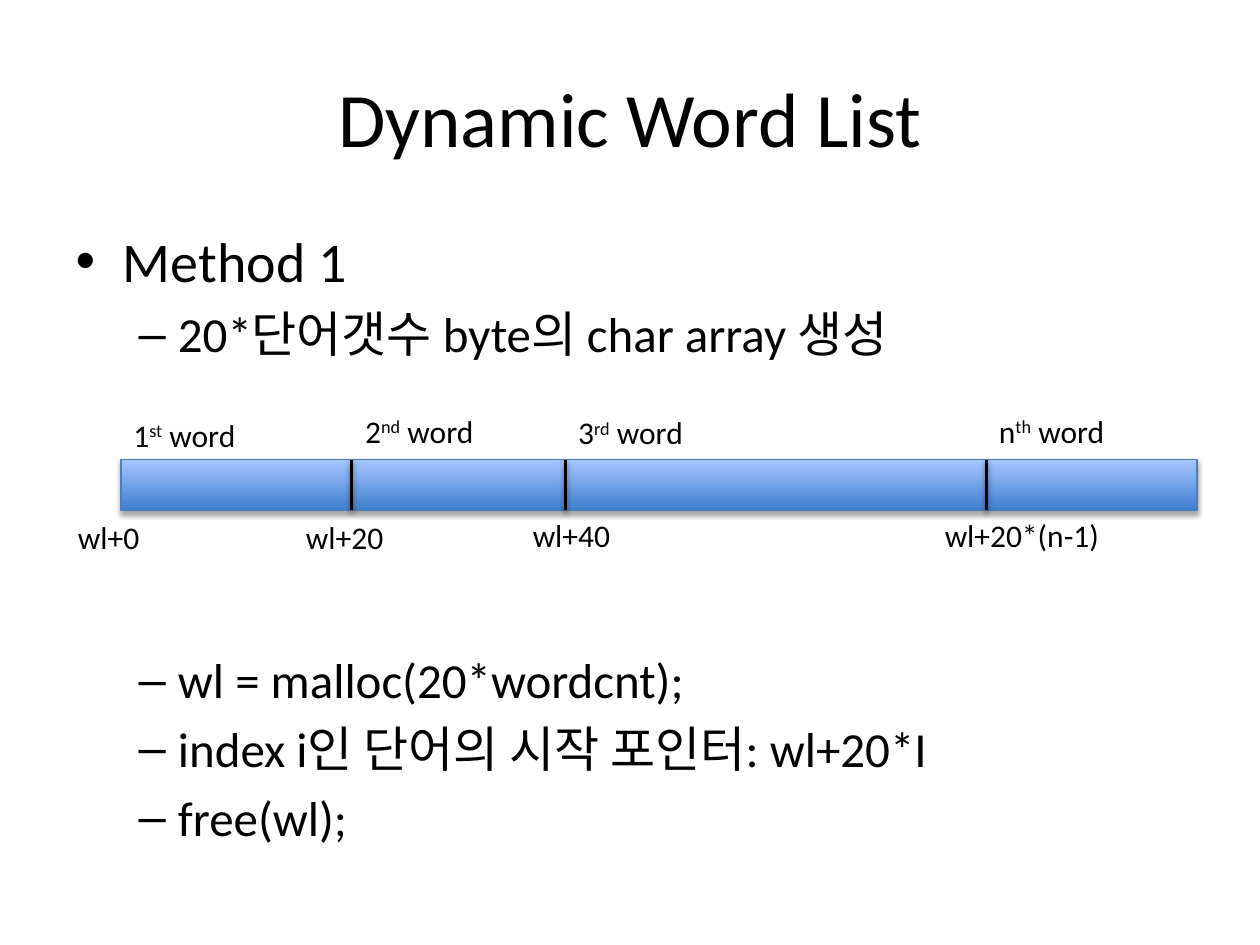
from dataclasses import dataclass

import pptx
import pptx.dml.color
import pptx.enum.shapes
import pptx.enum.text
import pptx.oxml
import pptx.oxml.ns
import pptx.util
from pptx.util import Inches


@dataclass(frozen=True)
class Theme:
    font: str = "Calibri"
    ink: str = "000000"
    bar_low: str = "3F80CE"
    bar_high: str = "A4C4FF"
    bar_edge: str = "4B7EBC"
    title_size: int = 44
    point_size: int = 32
    subpoint_size: int = 28
    label_size: int = 18


THEME = Theme()

# Text, level, space before in points (None keeps the layout's spacing)
POINTS = [
    ("Method 1", 0, None),
    ("20*단어갯수 byte의 char array 생성", 1, None),
    ("wl = malloc(20*wordcnt);", 1, 164),  # leaves room for the memory bar
    ("index i인 단어의 시작 포인터: wl+20*I", 1, None),
    ("free(wl);", 1, None),
]

# Offset in the bar, ordinal and suffix, its left, top and width,
# then the address with its left, top and width (all relative to the bar)
WORDS = [
    (0, "1", "st", (0, -0.4, 1.04), "wl+0", (-0.44, 0.41, 0.69)),
    (1.83, "2", "nd", (1.84, -0.43, 1.1), "wl+20", (1.37, 0.41, 0.82)),
    (3.53, "3", "rd", (3.53, -0.42, 1.07), "wl+40", (3.17, 0.4, 0.82)),
    (6.87, "n", "th", (6.87, -0.43, 1.07), "wl+20*(n-1)", (6.44, 0.4, 1.44)),
]


def rgb(value):
    return pptx.dml.color.RGBColor.from_string(value)


def style_runs(paragraph, size):
    for run in paragraph.runs:
        run.font.name = THEME.font
        run.font.size = pptx.util.Pt(size)
        run.font.color.rgb = rgb(THEME.ink)


def place(shape, box):
    shape.left, shape.top, shape.width, shape.height = map(Inches, box)


def add_shadow(shape, opacity, distance):
    """Soft shadow straight below; call after the line is set."""
    shape._element.spPr.append(pptx.oxml.parse_xml(
        f'<a:effectLst {pptx.oxml.ns.nsdecls("a")}>'
        f'<a:outerShdw blurRad="{pptx.util.Pt(3.1)}" dist="{pptx.util.Pt(distance)}"'
        ' dir="5400000" rotWithShape="0">'
        f'<a:srgbClr val="{THEME.ink}"><a:alpha val="{opacity * 1000}"/></a:srgbClr>'
        '</a:outerShdw></a:effectLst>'))


def fill_title(title, box):
    place(title, box)
    title.text_frame.text = "Dynamic Word List"
    style_runs(title.text_frame.paragraphs[0], THEME.title_size)


def fill_body(body, box):
    place(body, box)
    frame = body.text_frame
    frame.text = "\n".join(text for text, _, _ in POINTS)
    for paragraph, (_, level, space) in zip(frame.paragraphs, POINTS):
        paragraph.level = level
        if space is not None:
            paragraph.space_before = pptx.util.Pt(space)
        style_runs(paragraph, THEME.subpoint_size if level else THEME.point_size)


def add_label(slide, box, *parts):
    """One-line label; a second part is set as superscript."""
    label = slide.shapes.add_textbox(*map(Inches, box))
    frame = label.text_frame
    frame.word_wrap = False
    frame.auto_size = pptx.enum.text.MSO_AUTO_SIZE.SHAPE_TO_FIT_TEXT
    paragraph = frame.paragraphs[0]
    for part in parts:
        paragraph.add_run().text = part
    style_runs(paragraph, THEME.label_size)
    if len(parts) > 1:
        paragraph.runs[1]._r.get_or_add_rPr().set("baseline", "30000")


def add_memory_bar(slide, box):
    left, top, _, height = box

    # Array of all words
    bar = slide.shapes.add_shape(
        pptx.enum.shapes.MSO_SHAPE.RECTANGLE, *map(Inches, box))
    bar.fill.gradient()
    bar.fill.gradient_angle = 90
    for stop, colour in zip(bar.fill.gradient_stops, (THEME.bar_low, THEME.bar_high)):
        stop.color.rgb = rgb(colour)
    bar.line.color.rgb = rgb(THEME.bar_edge)
    bar.line.width = pptx.util.Pt(0.75)
    add_shadow(bar, 35, 1.8)

    # Word boundaries, with the word above and its address below
    for offset, ordinal, suffix, word_at, address, address_at in WORDS:
        if offset:
            x = Inches(left + offset)
            boundary = slide.shapes.add_connector(
                pptx.enum.shapes.MSO_CONNECTOR.STRAIGHT,
                x, Inches(top + height), x, Inches(top))
            boundary.line.color.rgb = rgb(THEME.ink)
            boundary.line.width = pptx.util.Pt(2)
            add_shadow(boundary, 38, 1.6)
        for (dx, dy, width), parts in ((word_at, (ordinal, suffix, " word")),
                                       (address_at, (address,))):
            add_label(slide, (left + dx, top + dy, width, 0.4), *parts)


def main():
    deck = pptx.Presentation()
    deck.slide_width, deck.slide_height = Inches(10), Inches(7.5)
    slide = deck.slides.add_slide(deck.slide_layouts[1])  # title and content
    fill_title(slide.shapes.title, (0.5, 0.3, 9, 1.25))
    fill_body(slide.placeholders[1], (0.5, 1.75, 9, 4.95))
    add_memory_bar(slide, (0.96, 3.65, 8.54, 0.4))
    deck.save("out.pptx")


if __name__ == "__main__":
    main()
